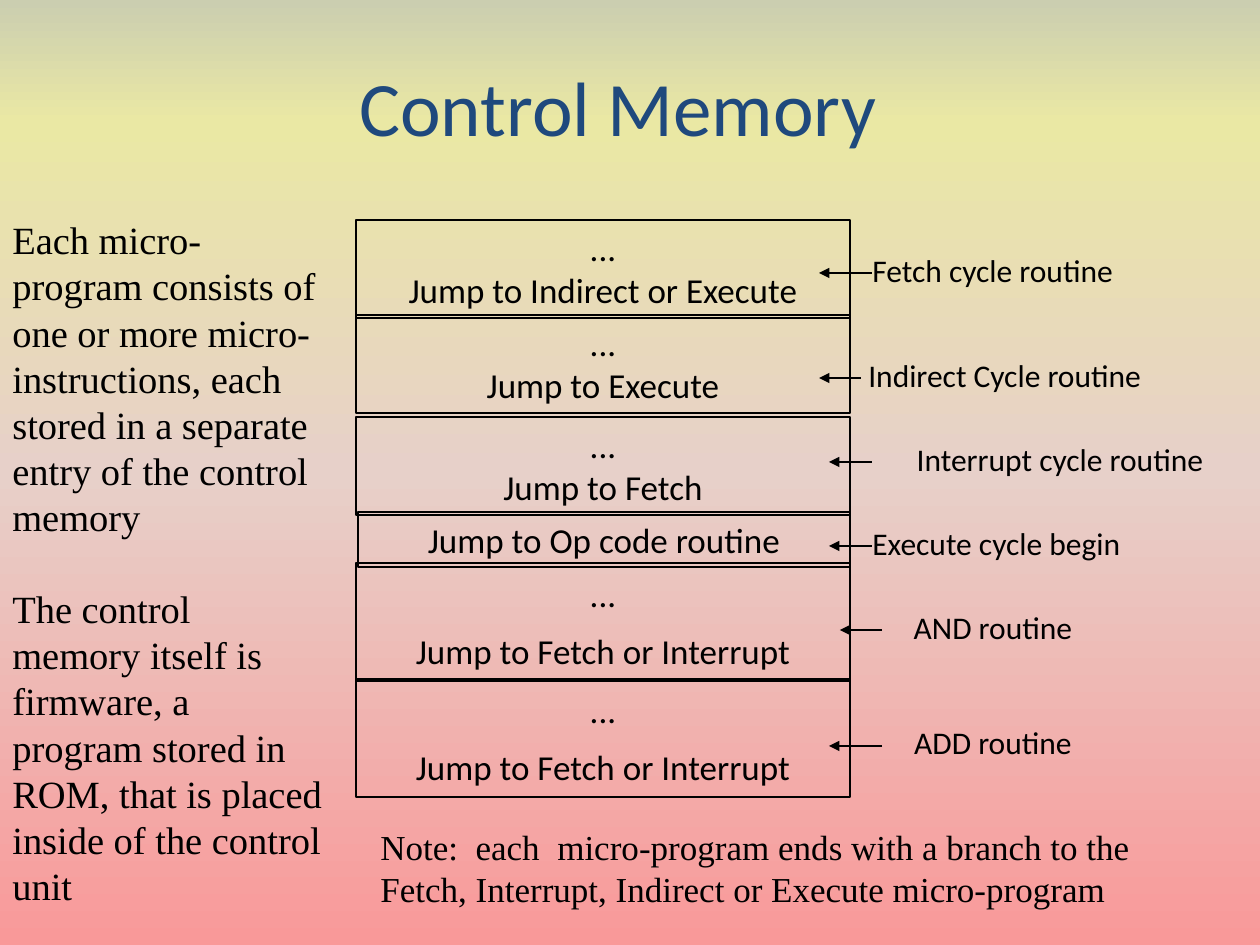
"""Build the Control Memory slide: stacked micro-program routines with labelled arrows."""
from lxml.etree import SubElement
from pptx import Presentation
from pptx.dml.color import RGBColor
from pptx.enum.shapes import MSO_CONNECTOR as Connector, MSO_SHAPE as Shape
from pptx.enum.text import MSO_ANCHOR as Anchor, PP_ALIGN as Align
from pptx.oxml.ns import qn
from pptx.util import Emu, Pt

SCALE = 914400 / 126
BLACK = "000000"
SERIF = "Times New Roman"


def px(*lengths):
    return [Emu(round(length * SCALE)) for length in lengths]


def write(box, lines, size, font="Calibri", color=BLACK, align=Align.LEFT, anchor=Anchor.TOP, gap=0):
    frame = box.text_frame
    frame.word_wrap = True
    frame.vertical_anchor = anchor
    for index, line in enumerate(lines):
        para = frame.add_paragraph() if index else frame.paragraphs[0]
        para.alignment = align
        para.space_before = Pt(gap if index else 0)
        span = para.add_run()
        span.text = line
        span.font.size = Pt(size)
        span.font.name = font
        span.font.color.rgb = RGBColor.from_string(color)


deck = Presentation()
deck.slide_width, deck.slide_height = px(1260, 945)
page = deck.slides.add_slide(deck.slide_layouts[6])

backdrop = page.background.fill
backdrop.gradient()
backdrop.gradient_angle = 270
stops = page.element.find(".//" + qn("a:gsLst"))
for stop in list(stops):
    stops.remove(stop)
for percent, color in [(0, "CBCEB0"), (13, "EAE8A4"), (50, "E7D0C9"), (100, "F99999")]:
    stop = SubElement(stops, qn("a:gs"), pos=str(percent * 1000))
    SubElement(stop, qn("a:srgbClr"), val=color)

title = page.shapes.add_textbox(*px(53, 0, 1130, 158))
write(title, ["Control Memory"], 44, color="1F497D", align=Align.CENTER, anchor=Anchor.BOTTOM)

routines = [
    (356, 220, 98, ["...", "Jump to Indirect or Execute"], 0),
    (356, 315, 98, ["...", "Jump to Execute"], 0),
    (356, 417, 98, ["...", "Jump to Fetch"], 0),
    (358, 512, 55, ["Jump to Op code routine"], 0),
    (356, 563, 118, ["...", "Jump to Fetch or Interrupt"], 9),
    (356, 679, 118, ["...", "Jump to Fetch or Interrupt"], 9),
]
for left, top, height, lines, gap in routines:
    box = page.shapes.add_shape(Shape.RECTANGLE, *px(left, top, 850 - left, height))
    box.shadow.inherit = False
    box.fill.background()
    box.line.color.rgb = RGBColor.from_string(BLACK)
    box.line.width = Pt(0.75)
    write(box, lines, 20, align=Align.CENTER, anchor=Anchor.MIDDLE, gap=gap)

labels = [
    ("Fetch cycle routine", 860, 238, 347, Align.LEFT, 872, 819, 273),
    ("Indirect Cycle routine", 856, 343, 393, Align.LEFT, 861, 819, 378),
    ("Interrupt cycle routine", 860, 427, 400, Align.CENTER, 872, 829, 462),
    ("Execute cycle begin", 860, 511, 363, Align.LEFT, 872, 829, 546),
    ("AND routine", 870, 595, 246, Align.CENTER, 882, 840, 630),
    ("ADD routine", 870, 710, 246, Align.CENTER, 882, 829, 746),
]
for label, left, top, width, align, start, tip, level in labels:
    box = page.shapes.add_textbox(*px(left, top, width, 63))
    write(box, [label], 18, align=align, anchor=Anchor.MIDDLE)
    arrow = page.shapes.add_connector(Connector.STRAIGHT, *px(start, level, tip, level))
    arrow.line.color.rgb = RGBColor.from_string(BLACK)
    arrow.line.width = Pt(0.75)
    SubElement(arrow.line._get_or_add_ln(), qn("a:tailEnd"), type="triangle")
    SubElement(arrow._element.spPr, qn("a:effectLst"))

explanation = page.shapes.add_textbox(*px(0, 210, 338, 712))
write(explanation, [
    "Each micro-program consists of one or more micro-instructions, "
    "each stored in a separate entry of the control memory",
    "The control memory itself is firmware, a program stored in ROM, "
    "that is placed inside of the control unit",
], 22, SERIF, gap=26)

note = page.shapes.add_textbox(*px(368, 819, 781, 97))
write(note, [
    "Note:  each  micro-program ends with a branch to the",
    "Fetch, Interrupt, Indirect or Execute micro-program",
], 20, SERIF)

deck.save("out.pptx")
